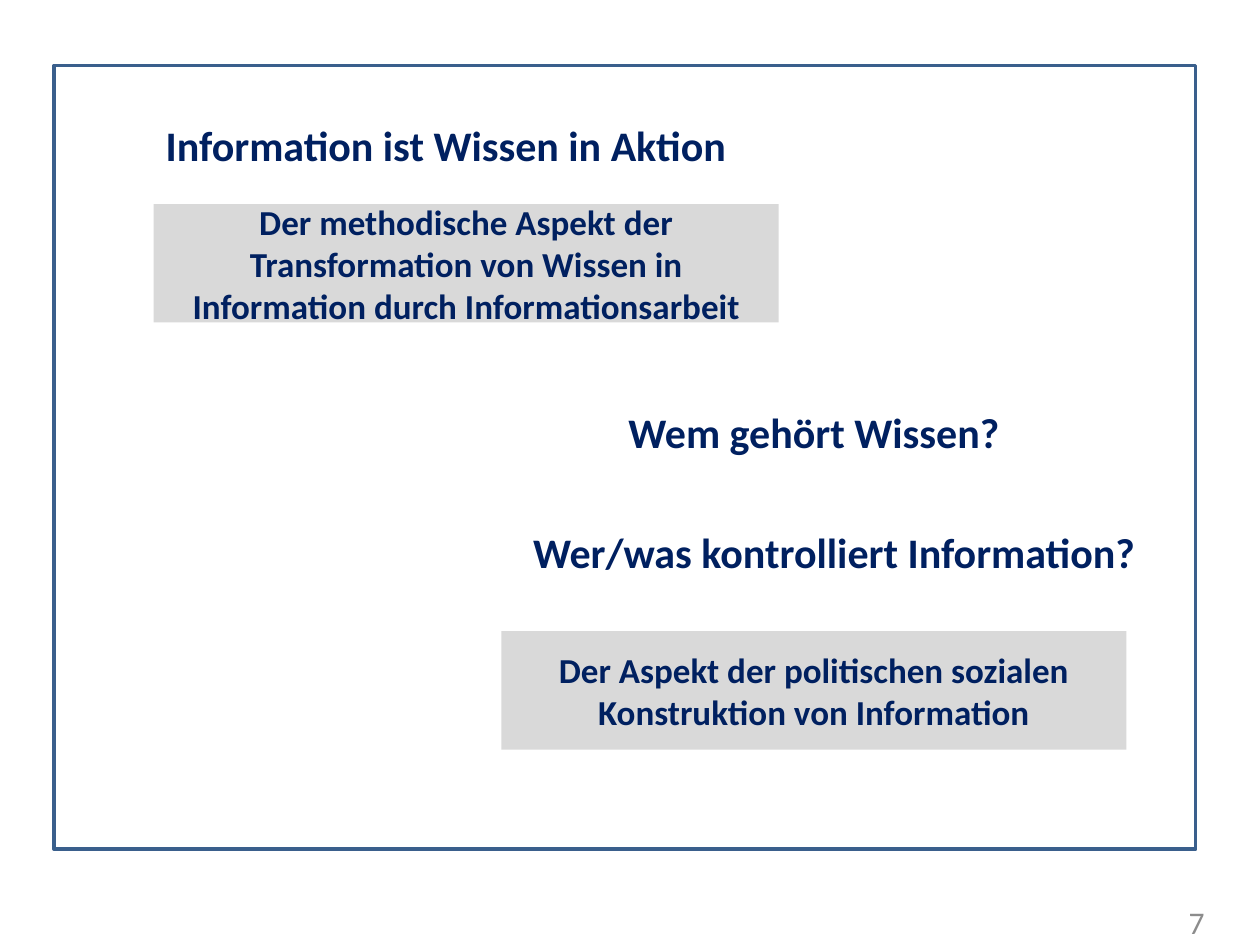
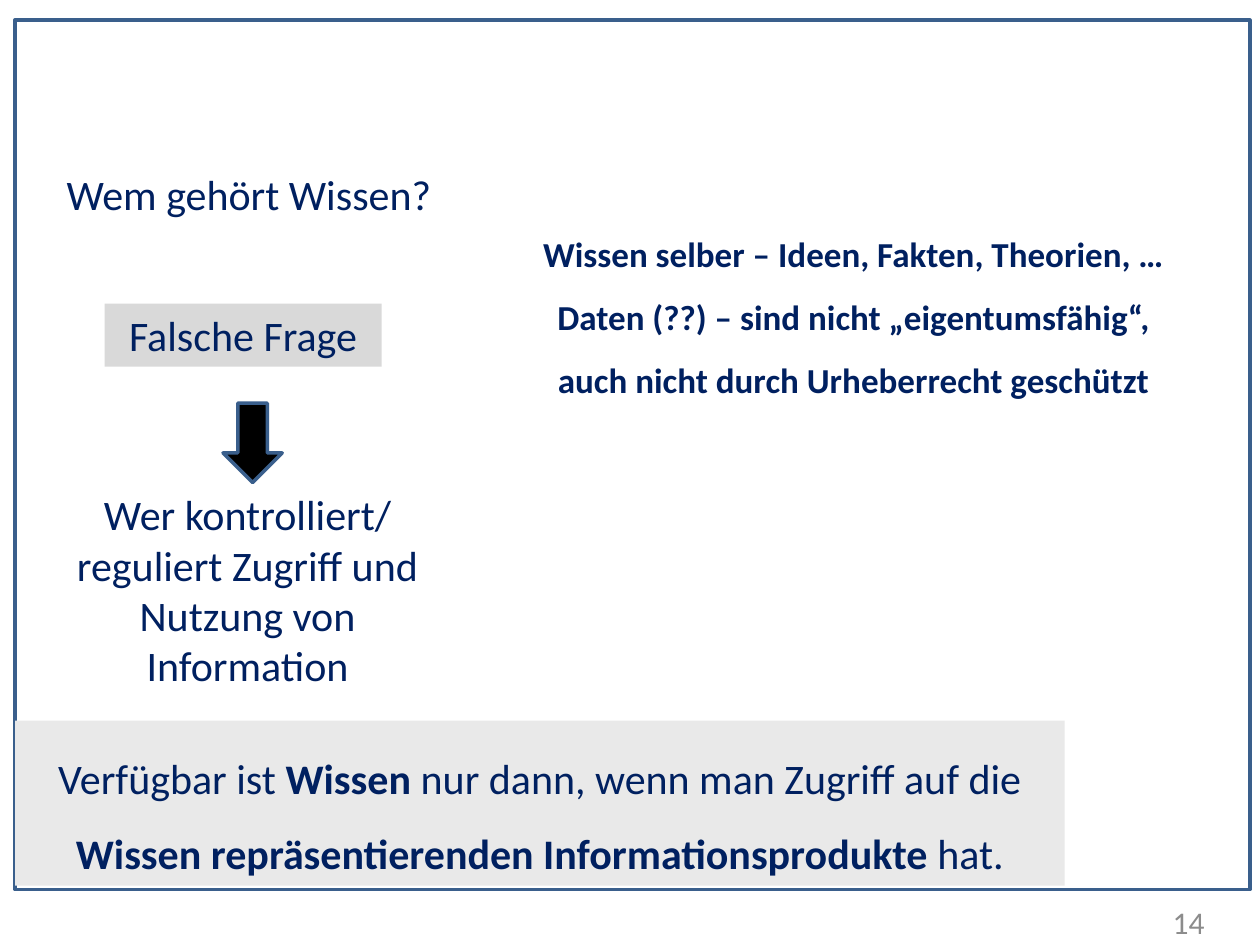
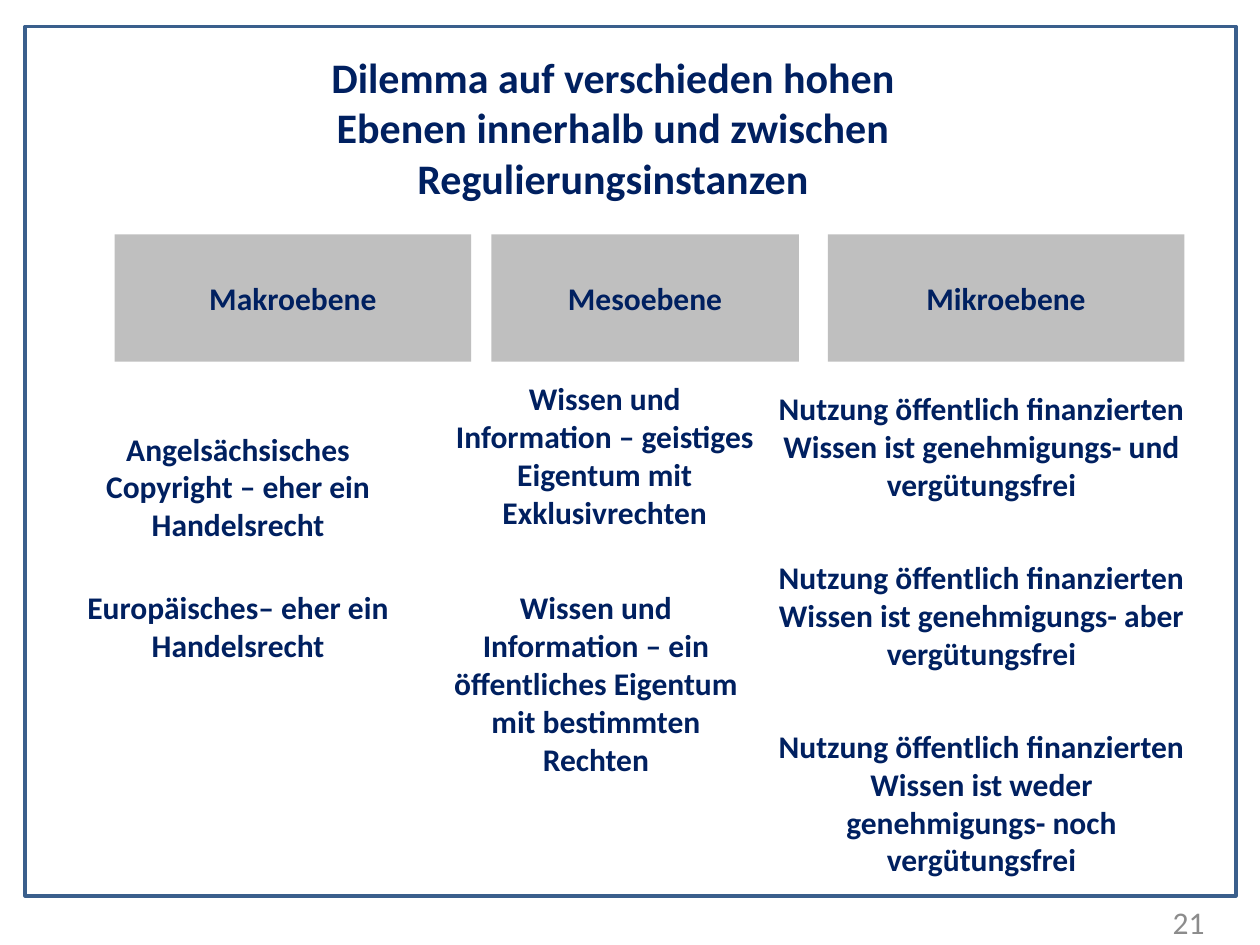
from pptx import Presentation
from pptx import util as u
from pptx.dml.color import RGBColor
from pptx.enum import shapes, text

# Shared look
NAVY = RGBColor(0x00, 0x20, 0x60)
STEEL = RGBColor(0x3A, 0x5F, 0x8C)
WHITE = RGBColor(0xFF, 0xFF, 0xFF)
BLACK = RGBColor(0x00, 0x00, 0x00)
NUMBER_GRAY = RGBColor(0x8C, 0x8C, 0x8C)
PALE_GRAY = RGBColor(0xE9, 0xE9, 0xE9)
LIGHT_GRAY = RGBColor(0xD9, 0xD9, 0xD9)
MID_GRAY = RGBColor(0xBF, 0xBF, 0xBF)
FONT = "Calibri"
TOP, MIDDLE = text.MSO_ANCHOR.TOP, text.MSO_ANCHOR.MIDDLE
LEFT, CENTER, RIGHT = text.PP_ALIGN.LEFT, text.PP_ALIGN.CENTER, text.PP_ALIGN.RIGHT

# Grid of the slide: 100 columns by 75 rows
COLUMNS, ROWS = 100, 75
WIDTH, HEIGHT = u.Inches(10), u.Inches(7.5)
NUMBER_PLACE = (73.3, 71.2, 23.3, 4)

# Text styles
QUESTION = dict(size=24, bold=True, anchor=MIDDLE)
ASPECT = dict(size=20, bold=True, anchor=MIDDLE, fill=LIGHT_GRAY)
PLAIN = dict(size=24)
TITLE = dict(size=24, bold=True)
HEADER = dict(size=18, bold=True, anchor=MIDDLE, fill=MID_GRAY)
ENTRY = dict(size=18, bold=True)
NUMBER = dict(size=18, align=RIGHT, anchor=MIDDLE, color=NUMBER_GRAY, fill=None)

# Slide 1: knowledge and information
ACTION_FRAME = (4.3, 5.2, 90.6, 62.2)
ASPECT_SIZE = (49.6, 9.4)
ACTION_BOXES = [
    ("Information ist Wissen in Aktion", (10.6, 6.8, *ASPECT_SIZE), QUESTION),
    ("Der Aspekt der politischen sozialen Konstruktion von Information",
     (39.8, 50.1, *ASPECT_SIZE), ASPECT),
    ("Wem gehört Wissen?", (39.8, 29.6, *ASPECT_SIZE), QUESTION),
    ("Wer/was kontrolliert Information?", (39.8, 39.1, 52.8, 9.4), QUESTION),
    ("Der methodische Aspekt der Transformation von Wissen in "
     "Information durch Informationsarbeit", (12.2, 16.2, *ASPECT_SIZE), ASPECT),
]

# Slide 2: who owns knowledge; a list holds (words, bold) runs
OWNER_FRAME = (1.2, 1.6, 98, 69)
ARROW_PLACE = (17.7, 32, 4.7, 6.3)
OWNER_BOXES = [
    ("Wem gehört Wissen?", (4.3, 12.9, 32.3, 5), dict(PLAIN, align=LEFT)),
    ("Wer kontrolliert/ reguliert Zugriff und Nutzung von Information",
     (3.5, 38.3, 32.3, 17.2), PLAIN),
    ("Wissen selber – Ideen, Fakten, Theorien, … Daten (??) – sind nicht "
     "„eigentumsfähig“, auch nicht durch Urheberrecht geschützt",
     (40.6, 16.3, 54.3, 16.4), dict(size=20, bold=True, spacing=1.5, fill=None)),
    ("Falsche Frage", (8.3, 24.1, 22, 5), dict(PLAIN, anchor=MIDDLE, fill=LIGHT_GRAY)),
    ([("Verfügbar ist ", False), ("Wissen ", True),
      ("nur dann, wenn man Zugriff auf die ", False),
      ("Wissen repräsentierenden Informationsprodukte ", True), ("hat.", False)],
     (1.2, 57.2, 83.3, 13.1), dict(PLAIN, spacing=1.5, fill=PALE_GRAY)),
]

# Slide 3: levels, as header, its left and width, entry width, entries (left, top, height, words)
LEVEL_FRAME = (2, 2.1, 96.1, 69)
LEVEL_TITLE = ("Dilemma auf verschieden hohen Ebenen innerhalb und zwischen "
               "Regulierungsinstanzen", (22.4, 3.6, 52.5, 13.1), TITLE)
HEADER_TOP, HEADER_HEIGHT = 18.6, 10.1
LEVELS = [
    ("Makroebene", 9.1, 28.3, 26, [
        (5.9, 33.6, 10.1, "Angelsächsisches Copyright – eher ein Handelsrecht"),
        (5.9, 46.2, 7.1, "Europäisches– eher ein Handelsrecht")]),
    ("Mesoebene", 39, 24.4, 26, [
        (35, 29.6, 13.1, "Wissen und Information – geistiges Eigentum mit Exklusivrechten"),
        (34.3, 46.2, 16.2, "Wissen und Information – ein öffentliches Eigentum "
                           "mit bestimmten Rechten")]),
    ("Mikroebene", 65.7, 28.3, 35.4, [
        (60.2, top, height, f"Nutzung öffentlich finanzierten Wissen ist {rule} vergütungsfrei")
        for top, height, rule in [(30.4, 10.1, "genehmigungs- und"),
                                  (43.8, 10.1, "genehmigungs- aber"),
                                  (57.2, 13.1, "weder genehmigungs- noch")]]),
]


def add_block(slide, place, fill=WHITE, line=None, kind=shapes.MSO_SHAPE.RECTANGLE):
    """Add a preset shape at a grid place (column, row, columns, rows)."""
    units = (WIDTH / COLUMNS, HEIGHT / ROWS) * 2
    shape = slide.shapes.add_shape(kind, *(round(n * unit) for n, unit in zip(place, units)))
    shape.shadow.inherit = False
    if fill is None:
        shape.fill.background()
    else:
        shape.fill.solid()
        shape.fill.fore_color.rgb = fill
    if line is None:
        shape.line.fill.background()
    else:
        shape.line.color.rgb = line
        shape.line.width = u.Pt(2)
    return shape


def add_text(slide, words, place, style):
    """Add a box with one paragraph; words is a string or a list of (words, bold) runs."""
    look = dict(bold=False, align=CENTER, anchor=TOP, spacing=None, color=NAVY, fill=WHITE)
    look.update(style)
    frame = add_block(slide, place, look["fill"]).text_frame
    frame.word_wrap = True
    frame.vertical_anchor = look["anchor"]
    paragraph = frame.paragraphs[0]
    paragraph.alignment = look["align"]
    paragraph.line_spacing = look["spacing"]
    runs = [(words, look["bold"])] if isinstance(words, str) else words
    for run_words, bold in runs:
        run = paragraph.add_run()
        run.text = run_words
        for name, value in dict(name=FONT, size=u.Pt(look["size"]), bold=bold).items():
            setattr(run.font, name, value)
        run.font.color.rgb = look["color"]


def add_page(presentation, number, frame_place, boxes):
    """Add a slide with its number, its framed area and its text boxes."""
    slide = presentation.slides.add_slide(presentation.slide_layouts[6])
    add_text(slide, str(number), NUMBER_PLACE, NUMBER)
    add_block(slide, frame_place, line=STEEL)
    for box in boxes:
        add_text(slide, *box)
    return slide


def level_boxes():
    """List the title, then the headers, then the entries under them."""
    headers = [(name, (left, HEADER_TOP, width, HEADER_HEIGHT), HEADER)
               for name, left, width, _, _ in LEVELS]
    entries = [(words, (left, top, width, height), ENTRY)
               for _, _, _, width, items in LEVELS for left, top, height, words in items]
    return [LEVEL_TITLE] + headers + entries


def main():
    presentation = Presentation()
    presentation.slide_width, presentation.slide_height = WIDTH, HEIGHT
    add_page(presentation, 7, ACTION_FRAME, ACTION_BOXES)
    owner_slide = add_page(presentation, 14, OWNER_FRAME, OWNER_BOXES)
    add_block(owner_slide, ARROW_PLACE, BLACK, STEEL, shapes.MSO_SHAPE.DOWN_ARROW)
    add_page(presentation, 21, LEVEL_FRAME, level_boxes())
    presentation.save("out.pptx")


if __name__ == "__main__":
    main()
